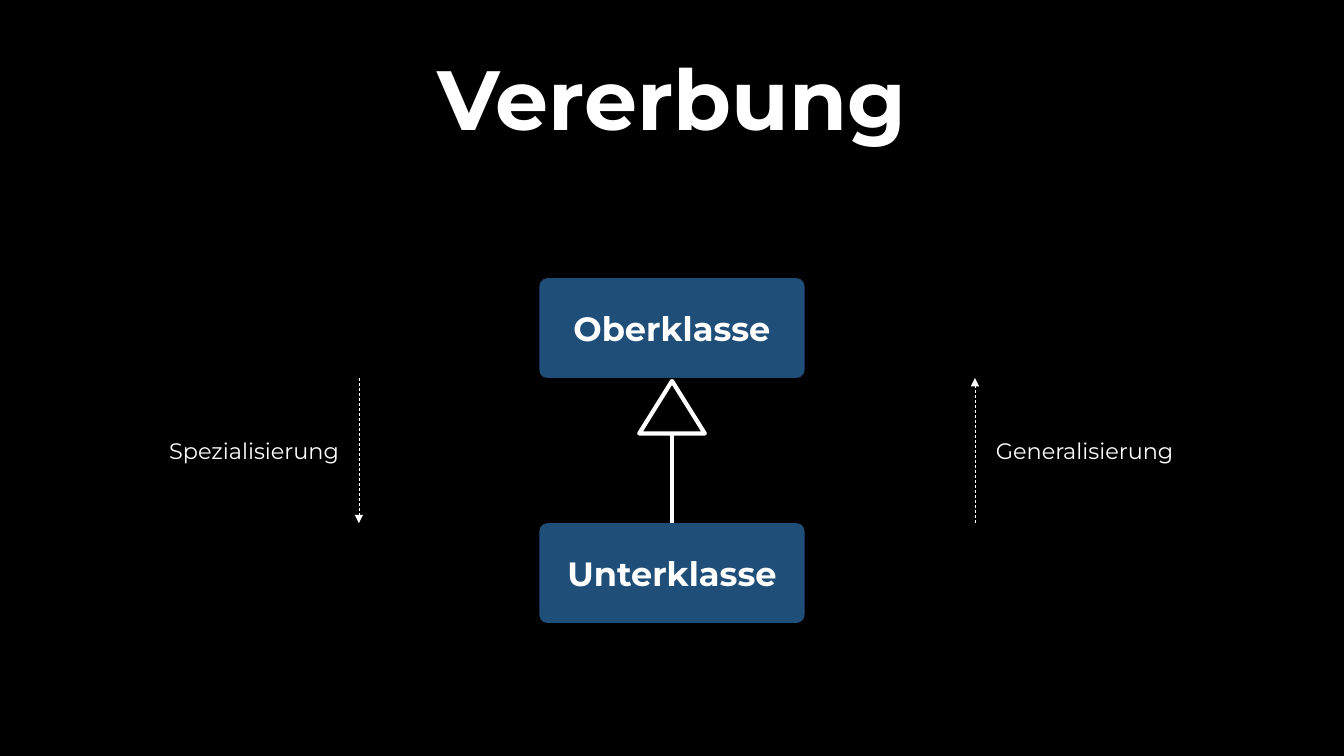
from dataclasses import dataclass

from lxml import etree
from pptx import Presentation
from pptx.dml.color import RGBColor
from pptx.enum import dml, shapes, text
from pptx.oxml import ns
from pptx.util import Inches, Pt


@dataclass(frozen=True)
class Theme:
    font: str = "Montserrat"
    background: RGBColor = RGBColor(0x00, 0x00, 0x00)
    ink: RGBColor = RGBColor(0xFF, 0xFF, 0xFF)
    class_fill: RGBColor = RGBColor(0x1F, 0x4E, 0x79)
    title_size: int = 60
    class_size: int = 24
    label_size: int = 16
    thin: float = 0.5
    thick: float = 3


THEME = Theme()


def write(frame, wording, size, bold=False, align=text.PP_ALIGN.CENTER,
          anchor=text.MSO_ANCHOR.MIDDLE, wrap=True, line_spacing=None):
    frame.word_wrap = wrap
    frame.auto_size = text.MSO_AUTO_SIZE.NONE
    frame.vertical_anchor = anchor
    paragraph = frame.paragraphs[0]
    paragraph.alignment = align
    paragraph.line_spacing = line_spacing
    paragraph.space_before = Pt(0)
    run = paragraph.add_run()
    run.text = wording
    run.font.name = THEME.font
    run.font.size = Pt(size)
    run.font.bold = bold
    run.font.color.rgb = THEME.ink


def add_line(slide, start, end, width, dashed=False, arrow=False):
    """Draw a line between two (x, y) points in inches, arrowhead at the end."""
    line = slide.shapes.add_connector(
        shapes.MSO_CONNECTOR.STRAIGHT, *map(Inches, start + end))
    line.line.color.rgb = THEME.ink
    line.line.width = Pt(width)
    if dashed:
        line.line.dash_style = dml.MSO_LINE.DASH
    if arrow:
        etree.SubElement(line.line._get_or_add_ln(), ns.qn("a:tailEnd"), type="triangle")
    etree.SubElement(line._element.spPr, ns.qn("a:effectLst"))
    return line


def add_title(slide, left, top, width, height):
    title = slide.shapes.title
    title.left, title.top = Inches(left), Inches(top)
    title.width, title.height = Inches(width), Inches(height)
    write(title.text_frame, "Vererbung", THEME.title_size, bold=True, line_spacing=0.9)


def add_class(slide, name, left, top, width, height):
    box = slide.shapes.add_shape(shapes.MSO_SHAPE.ROUNDED_RECTANGLE,
                                 *map(Inches, (left, top, width, height)))
    box.adjustments[0] = 0.08
    box.shadow.inherit = False
    box.fill.solid()
    box.fill.fore_color.rgb = THEME.class_fill
    box.line.fill.background()
    write(box.text_frame, name, THEME.class_size, bold=True)
    return box


def add_hierarchy(slide, left, top, width, height):
    """Superclass above subclass, joined by a hollow inheritance arrow."""
    class_height = 0.99
    head_width, head_height, head_gap = 0.65, 0.52, 0.03
    center = left + width / 2
    subclass_top = top + height - class_height
    head_top = top + class_height + head_gap

    add_class(slide, "Oberklasse", left, top, width, class_height)
    subclass = add_class(slide, "Unterklasse", left, subclass_top, width, class_height)

    head = slide.shapes.add_shape(
        shapes.MSO_SHAPE.ISOSCELES_TRIANGLE,
        *map(Inches, (center - head_width / 2, head_top, head_width, head_height)))
    head.shadow.inherit = False
    head.fill.background()
    head.line.color.rgb = THEME.ink
    head.line.width = Pt(THEME.thick)

    stem = add_line(slide, (center, head_top + head_height),
                    (center, subclass_top), THEME.thick)
    stem.end_connect(subclass, 0)


def add_direction(slide, label, label_left, label_width, arrow_x, start_y, end_y):
    """Dashed vertical arrow with a label beside its middle."""
    label_height = 0.37
    add_line(slide, (arrow_x, start_y), (arrow_x, end_y), THEME.thin,
             dashed=True, arrow=True)
    label_top = (start_y + end_y - label_height) / 2
    caption = slide.shapes.add_textbox(
        *map(Inches, (label_left, label_top, label_width, label_height)))
    write(caption.text_frame, label, THEME.label_size, align=text.PP_ALIGN.LEFT,
          anchor=text.MSO_ANCHOR.TOP, wrap=False)


def main():
    deck = Presentation()
    deck.slide_width, deck.slide_height = Inches(13.33), Inches(7.5)
    slide = deck.slides.add_slide(deck.slide_layouts.get_by_name("Title Only"))
    slide.background.fill.solid()
    slide.background.fill.fore_color.rgb = THEME.background

    add_title(slide, 0.15, 0.31, 13.03, 1.42)
    add_hierarchy(slide, 5.35, 2.76, 2.63, 3.42)
    upper, lower = 3.75, 5.19
    add_direction(slide, "Spezialisierung", 1.58, 1.91, 3.56, upper, lower)
    add_direction(slide, "Generalisierung", 9.78, 2.17, 9.67, lower, upper)
    deck.save("out.pptx")


if __name__ == "__main__":
    main()
